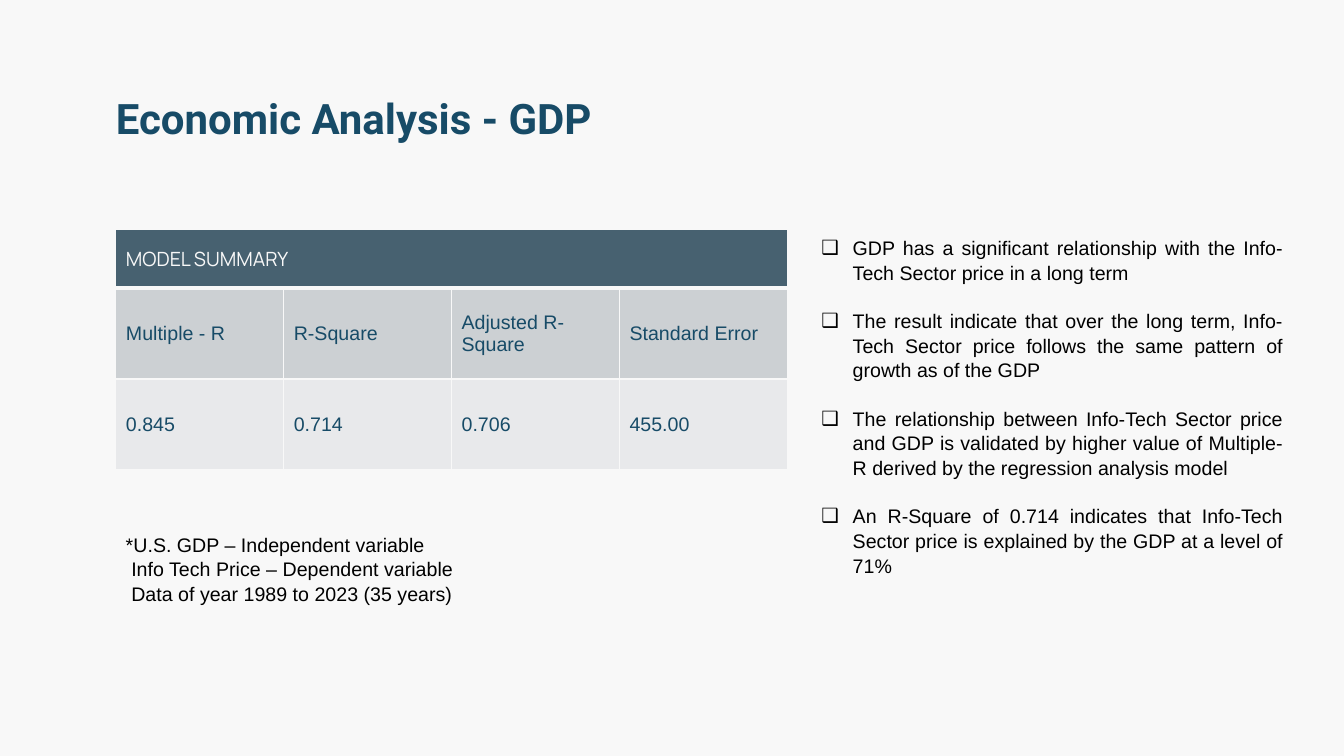
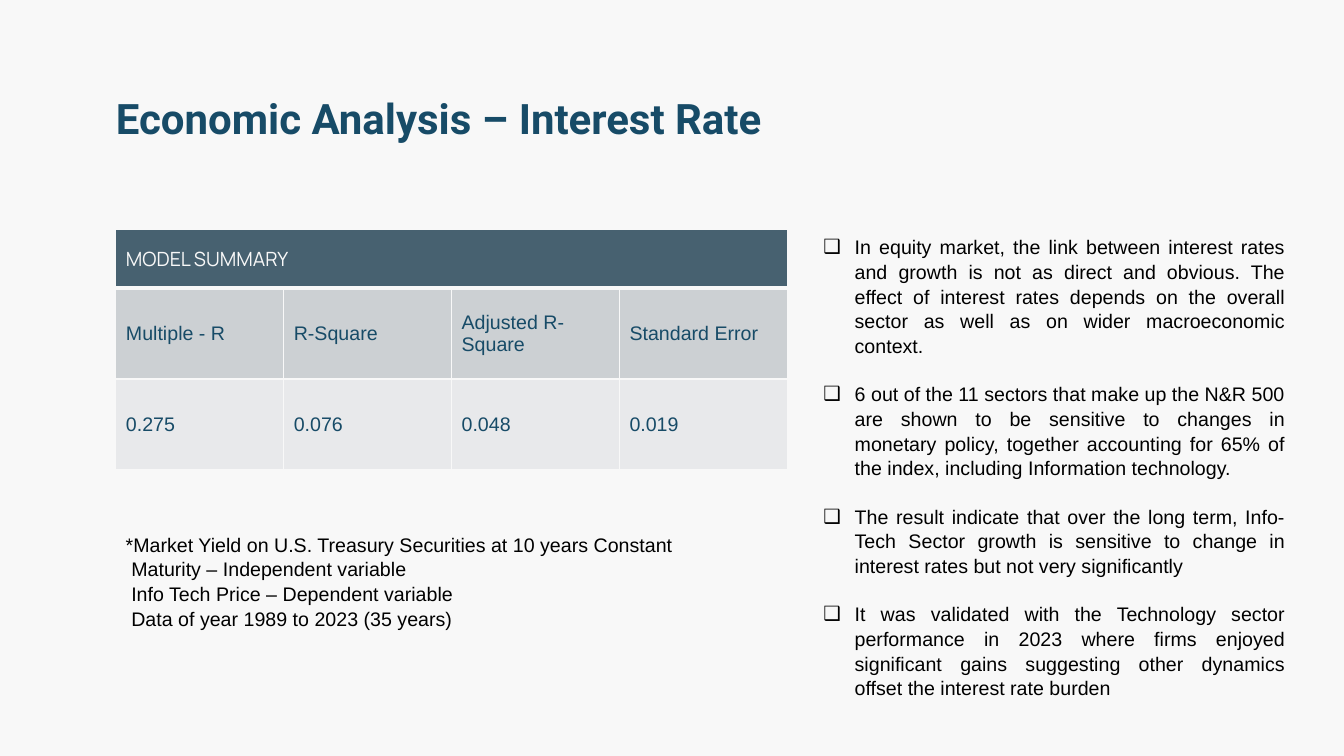
import pptx
import pptx.dml.color
import pptx.enum.text
import pptx.oxml
import pptx.oxml.ns
import pptx.util
from lxml import etree

Cm = pptx.util.Cm
Pt = pptx.util.Pt
RGBColor = pptx.dml.color.RGBColor
MIDDLE = pptx.enum.text.MSO_ANCHOR.MIDDLE

PAPER = RGBColor(0xF8, 0xF8, 0xF8)
NAVY = RGBColor(0x17, 0x4B, 0x67)
SLATE = RGBColor(0x47, 0x61, 0x70)
GREY = RGBColor(0xCC, 0xD0, 0xD3)
PALE = RGBColor(0xE8, 0xE9, 0xEB)
BLACK = RGBColor(0, 0, 0)

BODY_SIZE = Pt(14)
LINE_SPACING = 1.05
LEFT = Cm(2.92)
CONTENT_TOP = Cm(5.79)
COLUMN_WIDTH = Cm(4.23)
ROW_HEIGHTS = (Cm(1.47), Cm(2.29), Cm(2.29))
ROW_FILLS = (SLATE, GREY, PALE)
MEASURES = ("Multiple - R", "R-Square", "Adjusted R-Square", "Standard Error")
BULLET_INDENT = Cm(0.79)
NOTE_INDENT = Cm(0.14)

SHARED_NOTES = (
    "Info Tech Price – Dependent variable",
    "Data of year 1989 to 2023 (35 years)",
)

ANALYSES = (
    {
        "title": "Economic Analysis - GDP",
        "values": ("0.845", "0.714", "0.706", "455.00"),
        "notes": ("*U.S. GDP – Independent variable",),
        "findings": (
            "GDP has a significant relationship with the Info-Tech Sector "
            "price in a long term",
            "The result indicate that over the long term, Info-Tech Sector "
            "price follows the same pattern of growth as of the GDP",
            "The relationship between Info-Tech Sector price and GDP is "
            "validated by higher value of Multiple-R derived by the "
            "regression analysis model",
            "An R-Square of 0.714 indicates that Info-Tech Sector price is "
            "explained by the GDP at a level of 71%",
        ),
        "findings_box": (Cm(20.45), Cm(5.79), Cm(12.14), Cm(9.25)),
    },
    {
        "title": "Economic Analysis – Interest Rate",
        "values": ("0.275", "0.076", "0.048", "0.019"),
        "notes": (
            "*Market Yield on U.S. Treasury Securities at 10 years Constant",
            "Maturity – Independent variable",
        ),
        "findings": (
            "In equity market, the link between interest rates and growth is "
            "not as direct and obvious. The effect of interest rates depends "
            "on the overall sector as well as on wider macroeconomic context.",
            "6 out of the 11 sectors that make up the N&R 500 are shown to be "
            "sensitive to changes in monetary policy, together accounting for "
            "65% of the index, including Information technology.",
            "The result indicate that over the long term, Info-Tech Sector "
            "growth is sensitive to change in interest rates but not very "
            "significantly",
            "It was validated with the Technology sector performance in 2023 "
            "where firms enjoyed significant gains suggesting other dynamics "
            "offset the interest rate burden",
        ),
        "findings_box": (Cm(20.5), Cm(5.77), Cm(12.14), Cm(12.22)),
    },
)


def style(paragraph, color, font="Arial", size=BODY_SIZE, bold=False):
    for run in paragraph.runs:
        run.font.name = font
        run.font.size = size
        run.font.bold = bold
        run.font.color.rgb = color


def add_text(slide, box, lines):
    frame = slide.shapes.add_textbox(*box).text_frame
    frame.word_wrap = True
    frame.text = "\n".join(lines)
    return frame


def add_title(slide, title):
    frame = add_text(slide, (Cm(2.67), Cm(2.01), Cm(28.52), Cm(1.93)), [title])
    frame.vertical_anchor = MIDDLE
    frame.margin_left = frame.margin_right = Cm(0.25)
    frame.margin_top = frame.margin_bottom = Cm(0.25)
    style(frame.paragraphs[0], NAVY, "Roboto", Pt(30), True)


def set_borders(cell, top, bottom):
    """Draw paper-coloured cell edges; call before the cell is filled."""
    properties = cell._tc.get_or_add_tcPr()
    for side, width in (("L", 1), ("R", 1), ("T", top), ("B", bottom)):
        properties.append(pptx.oxml.parse_xml(
            f'<a:ln{side} {pptx.oxml.ns.nsdecls("a")} w="{Pt(width)}">'
            f'<a:solidFill><a:srgbClr val="{PAPER}"/></a:solidFill></a:ln{side}>'
        ))


def add_model_summary(slide, values):
    rows = (("MODEL SUMMARY", "", "", ""), MEASURES, values)
    columns = len(MEASURES)
    table = slide.shapes.add_table(
        len(rows), columns, LEFT, CONTENT_TOP,
        COLUMN_WIDTH * columns, sum(ROW_HEIGHTS),
    ).table
    table.first_row = table.horz_banding = False
    for column in table.columns:
        column.width = COLUMN_WIDTH
    for r, texts in enumerate(rows):
        table.rows[r].height = ROW_HEIGHTS[r]
        for c, text in enumerate(texts):
            cell = table.cell(r, c)
            set_borders(cell, 3 if r == 1 else 1, 3 if r == 0 else 1)
            cell.fill.solid()
            cell.fill.fore_color.rgb = ROW_FILLS[r]
            cell.vertical_anchor = MIDDLE
            cell.text = text
            if r == 0:
                style(cell.text_frame.paragraphs[0], PAPER, "Manrope")
            else:
                style(cell.text_frame.paragraphs[0], NAVY)
    table.cell(0, 0).merge(table.cell(0, columns - 1))


def add_notes(slide, notes):
    """List the variables, aligned behind the asterisk of the first line."""
    lines = notes + SHARED_NOTES
    frame = add_text(slide, (LEFT, Cm(13.27), Cm(15.39), Cm(0.6) * (len(lines))), lines)
    for index, paragraph in enumerate(frame.paragraphs):
        paragraph.line_spacing = LINE_SPACING
        style(paragraph, BLACK)
        if index:
            paragraph._p.get_or_add_pPr().set("marL", str(NOTE_INDENT))


def add_bullet(paragraph):
    properties = paragraph._p.get_or_add_pPr()
    properties.set("marL", str(BULLET_INDENT))
    properties.set("indent", str(-BULLET_INDENT))
    color = etree.SubElement(properties, pptx.oxml.ns.qn("a:buClr"))
    etree.SubElement(color, pptx.oxml.ns.qn("a:srgbClr"), val=str(BLACK))
    etree.SubElement(properties, pptx.oxml.ns.qn("a:buFont"), typeface="Arial")
    etree.SubElement(properties, pptx.oxml.ns.qn("a:buChar"), char="❑")


def add_findings(slide, findings, box):
    for paragraph in add_text(slide, box, findings).paragraphs:
        paragraph.alignment = pptx.enum.text.PP_ALIGN.JUSTIFY
        paragraph.line_spacing = LINE_SPACING
        paragraph.space_after = Pt(16.9)
        style(paragraph, BLACK)
        add_bullet(paragraph)


def main():
    deck = pptx.Presentation()
    deck.slide_width, deck.slide_height = Cm(33.87), Cm(19.05)
    backdrop = deck.slide_master.background.fill
    backdrop.solid()
    backdrop.fore_color.rgb = PAPER
    for analysis in ANALYSES:
        slide = deck.slides.add_slide(deck.slide_layouts[6])
        add_title(slide, analysis["title"])
        add_model_summary(slide, analysis["values"])
        add_notes(slide, analysis["notes"])
        add_findings(slide, analysis["findings"], analysis["findings_box"])
    deck.save("out.pptx")


if __name__ == "__main__":
    main()
